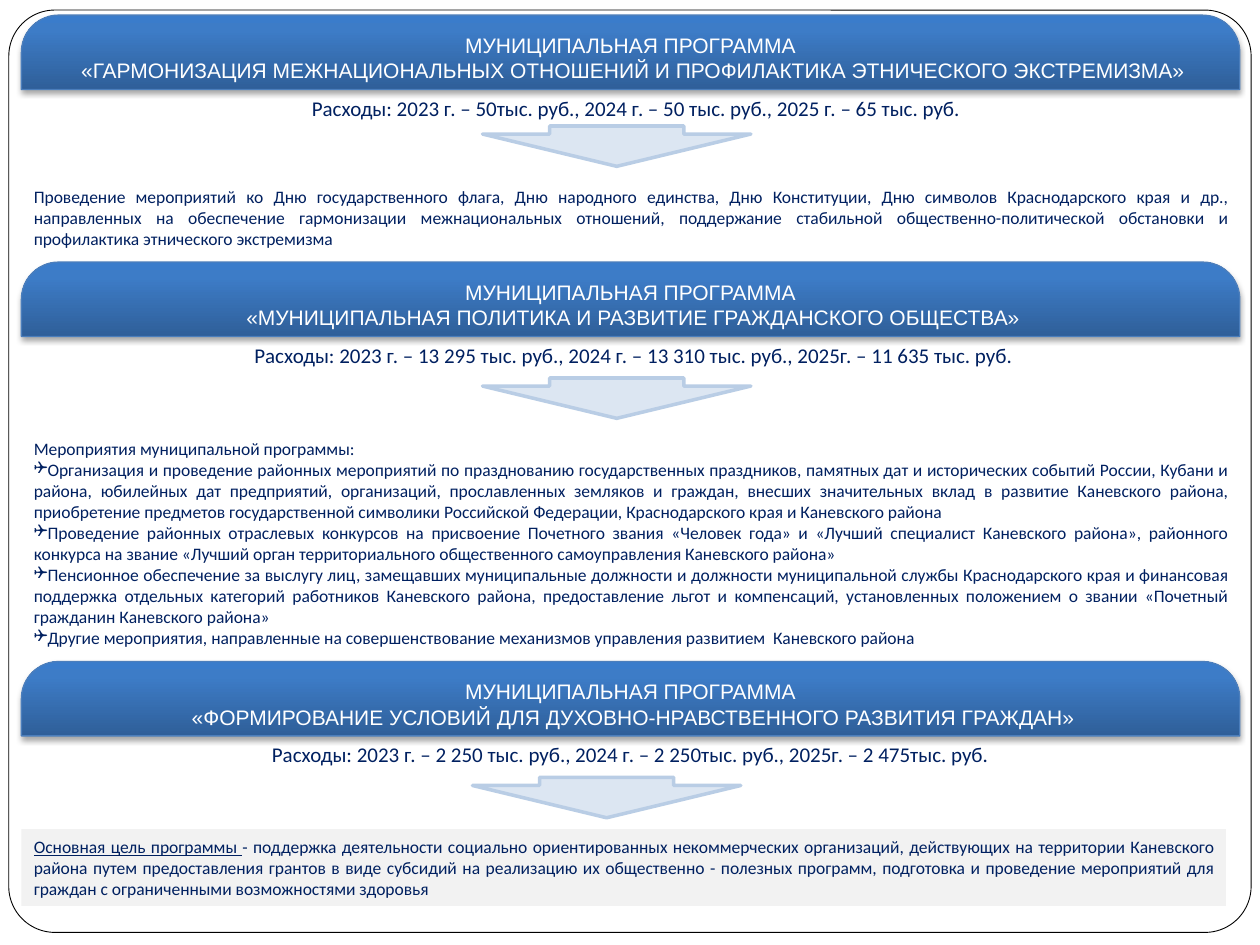
from lxml.etree import SubElement
from pptx import Presentation
from pptx.dml.color import RGBColor
from pptx.enum.shapes import MSO_SHAPE
from pptx.enum.text import MSO_ANCHOR, PP_ALIGN
from pptx.oxml.ns import qn
from pptx.util import Inches, Pt

NAVY, WHITE = "002060", "FFFFFF"
GRADIENT = [(0, "2F5F99"), (80, "3D7CC7"), (100, "3A7CCB")]
LEFT, WIDTH = 0.17, 9.67
BANNER_HEIGHT, COST_HEIGHT, ARROW_HEIGHT = 0.59, 0.3, 0.32
ARROW_WIDTH = 2.13
HEADING = "МУНИЦИПАЛЬНАЯ ПРОГРАММА"

# Each body paragraph is (bulleted, [(text, underlined), ...]).
PROGRAMS = [
    {
        "top": 0.12,
        "name": " «ГАРМОНИЗАЦИЯ МЕЖНАЦИОНАЛЬНЫХ ОТНОШЕНИЙ И ПРОФИЛАКТИКА ЭТНИЧЕСКОГО ЭКСТРЕМИЗМА»",
        "cost": "Расходы: 2023 г. – 50тыс. руб., 2024 г. – 50 тыс. руб., 2025 г. – 65 тыс. руб.",
        "cost_box": (0.55, 9),
        "arrow": (3.83, 1),
        "body_box": (LEFT, 1.42, WIDTH, 0.61),
        "fill": WHITE,
        "hanging": -0.38,
        "body": [
            (False, [("Проведение мероприятий ко Дню государственного флага, Дню народного единства, Дню Конституции, Дню символов Краснодарского края и др., направленных на обеспечение гармонизации межнациональных отношений, поддержание стабильной общественно-политической обстановки и профилактика этнического экстремизма ", False)]),
        ],
    },
    {
        "top": 2.08,
        "name": " «МУНИЦИПАЛЬНАЯ ПОЛИТИКА И РАЗВИТИЕ ГРАЖДАНСКОГО ОБЩЕСТВА»",
        "cost": "Расходы: 2023 г. – 13 295 тыс. руб., 2024 г. – 13 310 тыс. руб., 2025г. – 11 635 тыс. руб.",
        "cost_box": (0.42, 9.22),
        "arrow": (3.83, 3),
        "body_box": (LEFT, 3.42, WIDTH, 1.78),
        "fill": WHITE,
        "hanging": -0.38,
        "body": [
            (False, [("Мероприятия муниципальной программы:", False)]),
            (True, [("Организация и проведение районных мероприятий по празднованию государственных праздников, памятных дат и исторических событий России, Кубани и района, юбилейных дат предприятий, организаций, прославленных земляков и граждан, внесших значительных вклад в развитие Каневского района, приобретение предметов государственной символики Российской Федерации, Краснодарского края и Каневского района", False)]),
            (True, [("Проведение районных отраслевых конкурсов на присвоение Почетного звания «Человек года» и «Лучший специалист Каневского района», районного конкурса на звание «Лучший орган территориального общественного самоуправления Каневского района»", False)]),
            (True, [("Пенсионное обеспечение за выслугу лиц, замещавших муниципальные должности и должности муниципальной службы Краснодарского края и финансовая поддержка отдельных категорий работников Каневского района, предоставление льгот и компенсаций, установленных положением о звании «Почетный гражданин Каневского района» ", False)]),
            (True, [("Другие мероприятия, направленные на совершенствование механизмов управления развитием  Каневского района", False)]),
        ],
    },
    {
        "top": 5.25,
        "name": " «ФОРМИРОВАНИЕ УСЛОВИЙ ДЛЯ ДУХОВНО-НРАВСТВЕННОГО РАЗВИТИЯ ГРАЖДАН»",
        "cost": "Расходы: 2023 г. – 2 250 тыс. руб., 2024 г. – 2 250тыс. руб., 2025г. – 2 475тыс. руб.",
        "cost_box": (LEFT, WIDTH),
        "arrow": (3.75, 6.17),
        "body_box": (LEFT, 6.58, 9.56, 0.61),
        "fill": "F2F2F2",
        "hanging": 0,
        "body": [
            (False, [
                ("Основная цель программы ", True),
                ("- поддержка деятельности социально ориентированных некоммерческих организаций, действующих на территории Каневского района путем предоставления грантов в виде субсидий на реализацию их общественно - полезных программ, подготовка и проведение мероприятий для граждан с ограниченными возможностями здоровья", False),
            ]),
        ],
    },
]


def color(value):
    return RGBColor.from_string(value)


def add_box(page, kind, place, fill=None, line=None, line_width=0, adjustments=()):
    box = page.shapes.add_shape(kind, *map(Inches, place))
    box.shadow.inherit = False
    for index, value in enumerate(adjustments):
        box.adjustments[index] = value
    if fill:
        box.fill.solid()
        box.fill.fore_color.rgb = color(fill)
    if line:
        box.line.color.rgb = color(line)
        box.line.width = Pt(line_width)
    else:
        box.line.fill.background()
    return box


def write(box, paragraphs, size, font, ink, alignment, hanging=0):
    frame = box.text_frame
    frame.word_wrap = True
    for index, (bulleted, spans) in enumerate(paragraphs):
        para = frame.add_paragraph() if index else frame.paragraphs[0]
        para.alignment = alignment
        if hanging:
            properties = para._p.get_or_add_pPr()
            properties.set("marL", "0")
            properties.set("indent", str(Inches(hanging)))
            if bulleted:
                SubElement(properties, qn("a:buFont"), typeface="Wingdings")
                SubElement(properties, qn("a:buChar"), char="❑")
        for text, underlined in spans:
            span = para.add_run()
            span.text = text
            span.font.size = Pt(size)
            span.font.name = font
            span.font.color.rgb = color(ink)
            if underlined:
                span.font.underline = True


def paint_banner(banner):
    """Gives the banner its upward gradient and soft shadow."""
    banner.fill.gradient()
    banner.fill.gradient_angle = 90
    properties = banner._element.spPr
    stops = properties.find(".//" + qn("a:gsLst"))
    for stop in list(stops):
        stops.remove(stop)
    for position, value in GRADIENT:
        stop = SubElement(stops, qn("a:gs"), pos=str(position * 1000))
        SubElement(stop, qn("a:srgbClr"), val=value)
    shadow = SubElement(
        properties.find(qn("a:effectLst")), qn("a:outerShdw"),
        blurRad=str(Pt(3.1)), dist=str(Pt(1.8)), dir="5400000", rotWithShape="0")
    shade = SubElement(shadow, qn("a:srgbClr"), val="000000")
    SubElement(shade, qn("a:alpha"), val="35000")


def add_program(page, program):
    body = add_box(page, MSO_SHAPE.RECTANGLE, program["body_box"], program["fill"])
    body.text_frame.vertical_anchor = MSO_ANCHOR.MIDDLE
    write(body, program["body"], 10, "Calibri", NAVY, PP_ALIGN.JUSTIFY, program["hanging"])

    top = program["top"]
    banner = add_box(page, MSO_SHAPE.ROUND_2_SAME_RECTANGLE,
                     (LEFT, top, WIDTH, BANNER_HEIGHT),
                     line="4B7EBC", line_width=0.75, adjustments=(0.5, 0))
    paint_banner(banner)
    banner.text_frame.vertical_anchor = MSO_ANCHOR.MIDDLE
    titles = [(False, [(text, False)]) for text in (HEADING, program["name"])]
    write(banner, titles, 12, "Arial", WHITE, PP_ALIGN.CENTER)

    cost_left, cost_width = program["cost_box"]
    cost = page.shapes.add_textbox(*map(
        Inches, (cost_left, top + BANNER_HEIGHT, cost_width, COST_HEIGHT)))
    write(cost, [(False, [(program["cost"], False)])], 12, "Calibri", NAVY, PP_ALIGN.CENTER)

    add_box(page, MSO_SHAPE.DOWN_ARROW, (*program["arrow"], ARROW_WIDTH, ARROW_HEIGHT),
            "DCE6F2", "B9CDE5", 2, (0.5, 0.8))


def main():
    deck = Presentation()
    deck.slide_width, deck.slide_height = Inches(10), Inches(7.5)
    page = deck.slides.add_slide(deck.slide_layouts[6])
    add_box(page, MSO_SHAPE.ROUNDED_RECTANGLE, (0.07, 0.08, 9.86, 7.32),
            WHITE, "000000", 0.5, (0.05,))
    for program in PROGRAMS:
        add_program(page, program)
    deck.save("out.pptx")


if __name__ == "__main__":
    main()
